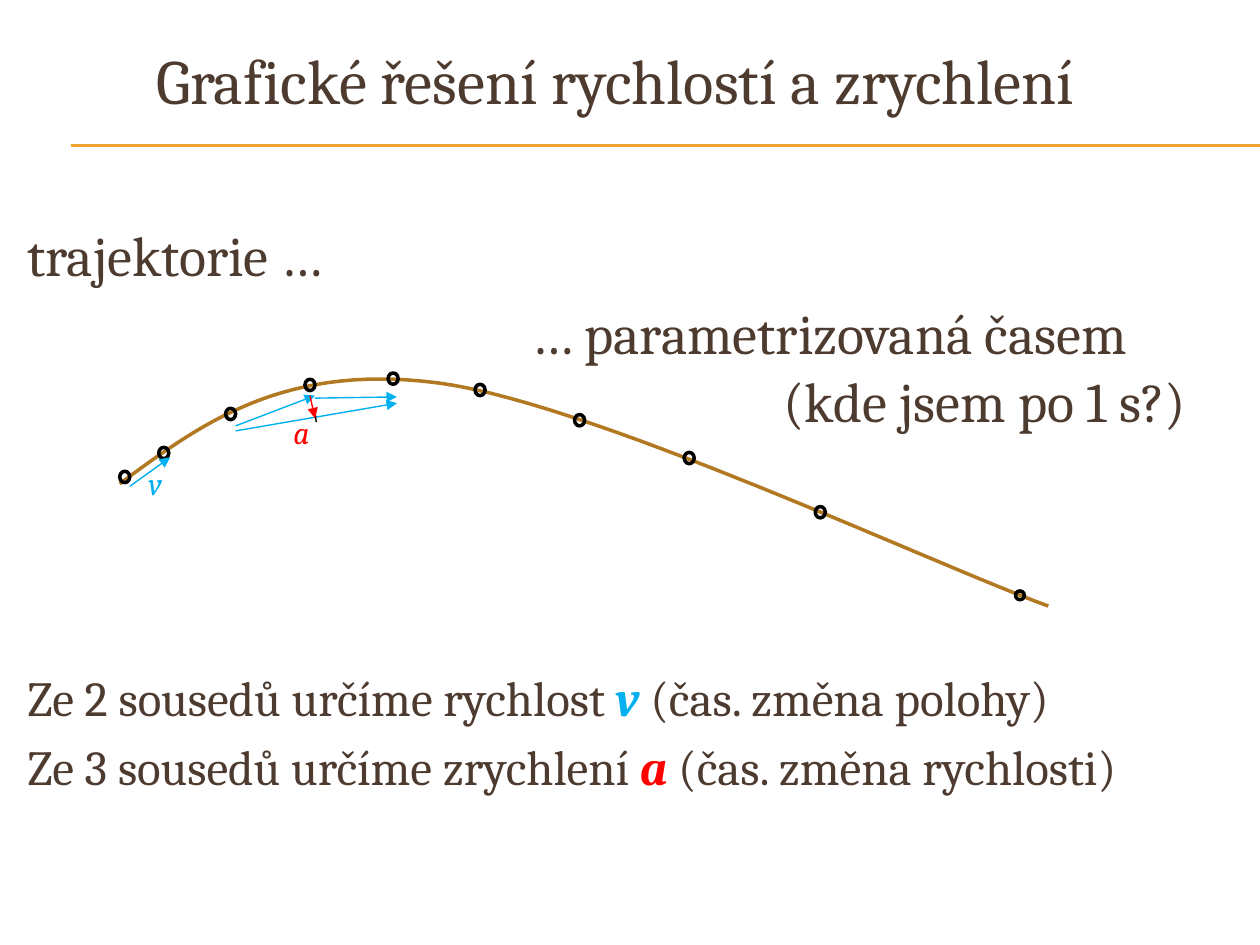
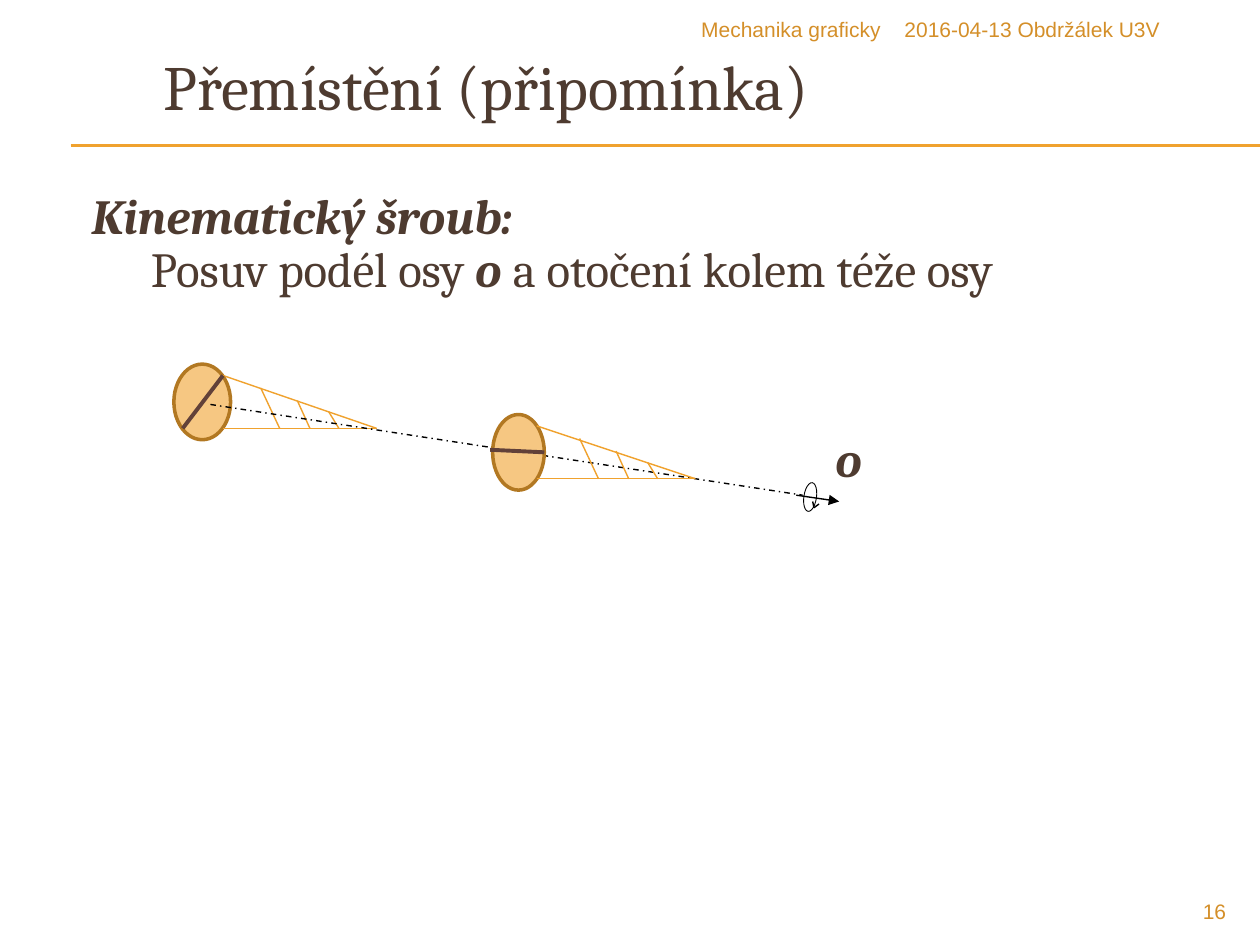
from lxml import etree
from pptx import Presentation
from pptx.dml.color import RGBColor
from pptx.enum.dml import MSO_LINE_DASH_STYLE as Dash
from pptx.enum.shapes import MSO_CONNECTOR as Connector, MSO_SHAPE as Shape
from pptx.enum.text import MSO_ANCHOR as Anchor, PP_ALIGN as Align
from pptx.oxml.ns import qn
from pptx.util import Inches, Pt

SERIF, SANS = "Cambria", "Arial"
BROWN, DARK_BROWN, FOOTER = "4E3B30", "624139", "D48F29"
AMBER, PALE_AMBER, OCHRE = "F0A22E", "F6C782", "B27822"
BLUE, RED, BLACK = "00B0F0", "FF0000", "000000"
THIN = 0.79


def rgb(value):
    return RGBColor.from_string(value)


def add_line(page, start, end, color, width=THIN, arrow=False, dash=None):
    line = page.shapes.add_connector(
        Connector.STRAIGHT, *(Inches(value) for value in (*start, *end)))
    line.line.color.rgb = rgb(color)
    line.line.width = Pt(width)
    if dash:
        line.line.dash_style = dash
    if arrow:
        outline = line.line._get_or_add_ln()
        etree.SubElement(outline, qn("a:tailEnd")).set("type", "triangle")
    etree.SubElement(line._element.spPr, qn("a:effectLst"))


def style_shape(shape, color, width, fill=None):
    shape.shadow.inherit = False
    if fill:
        shape.fill.solid()
        shape.fill.fore_color.rgb = rgb(fill)
    else:
        shape.fill.background()
    shape.line.color.rgb = rgb(color)
    shape.line.width = Pt(width)


def add_ellipse(page, box, color, width, fill=None):
    ellipse = page.shapes.add_shape(Shape.OVAL, *(Inches(value) for value in box))
    style_shape(ellipse, color, width, fill)
    return ellipse


def add_text(page, box, paragraphs, size, color=BROWN, font=SERIF, align=Align.LEFT,
             anchor=Anchor.TOP, wrap=True):
    """Each paragraph is a list of (text, emphasis colour or None); returns the paragraphs."""
    frame = page.shapes.add_textbox(*(Inches(value) for value in box)).text_frame
    frame.word_wrap = wrap
    frame.vertical_anchor = anchor
    for number, spans in enumerate(paragraphs):
        para = frame.add_paragraph() if number else frame.paragraphs[0]
        para.alignment = align
        para.font.name, para.font.size = font, Pt(size)
        para.font.color.rgb = rgb(color)
        if number:
            para.space_before = Pt(size * 0.2)
        for text, emphasis in spans:
            if text == "\n":
                para.add_line_break()
                continue
            span = para.add_run()
            span.text = text
            span.font.name, span.font.size = font, Pt(size)
            span.font.color.rgb = rgb(emphasis or color)
            if emphasis:
                span.font.bold = span.font.italic = True
    return frame.paragraphs


def set_indent(para, left, first=0):
    properties = para._p.get_or_add_pPr()
    properties.set("marL", str(Inches(left)))
    properties.set("indent", str(Inches(first)))


def add_page(deck, title, title_box):
    page = deck.slides.add_slide(deck.slide_layouts[6])
    for height in (1.15, 1.16):
        add_line(page, (0.56, height), (10, height), AMBER, 0.75)
    add_text(page, title_box, [[(title, None)]], 36, anchor=Anchor.MIDDLE)
    return page


def add_footers(page, topic, event, number):
    for text, box, align in (
        (topic, (3.92, 0.08, 3.17, 0.32), Align.RIGHT),
        (event, (7.08, 0.08, 2.75, 0.32), Align.LEFT),
        (number, (9, 7.08, 0.83, 0.27), Align.RIGHT),
    ):
        add_text(page, box, [[(text, None)]], 12, FOOTER, SANS, align)


def bezier_points(start, control_1, control_2, end, steps=30):
    for step in range(1, steps + 1):
        t = step / steps
        weights = ((1 - t) ** 3, 3 * t * (1 - t) ** 2, 3 * t * t * (1 - t), t ** 3)
        yield tuple(sum(w * value for w, value in zip(weights, axis))
                    for axis in zip(start, control_1, control_2, end))


def add_trajectory(page, left, top):
    start, crest, end = (0, 0.83), (2.53, 0.03), (7.37, 1.8)
    points = [*bezier_points(start, (0.65, 0.35), (1.3, -0.13), crest),
              *bezier_points(crest, (3.75, 0.19), (6.46, 1.47), end)]
    points = [(Inches(left + x), Inches(top + y)) for x, y in points]
    builder = page.shapes.build_freeform(Inches(left + start[0]), Inches(top + start[1]))
    builder.add_line_segments(points, close=False)
    style_shape(builder.convert_to_shape(), OCHRE, 2)

    seconds = [(0, 0.73), (0.31, 0.54), (0.84, 0.23), (1.47, 0), (2.13, -0.05),
               (2.82, 0.04), (3.61, 0.28), (4.48, 0.58), (5.52, 1.01)]
    for x, y in seconds:
        add_ellipse(page, (left + x, top + y, 0.08, 0.09), BLACK, 2)
    add_ellipse(page, (left + 7.11, top + 1.68, 0.07, 0.07), BLACK, 2)


def add_vectors(page):
    velocities = [((1.03, 3.86), (1.35, 3.63)), ((1.87, 3.38), (2.5, 3.14)),
                  ((2.5, 3.16), (3.15, 3.15)), ((1.87, 3.42), (3.15, 3.2))]
    for start, end in velocities:
        add_line(page, start, end, BLUE, arrow=True)
    add_line(page, (2.5, 3.27), (2.51, 3.35), BLACK)
    add_line(page, (2.46, 3.14), (2.5, 3.32), RED, arrow=True)
    for name, box, color in (("v", (1.08, 3.63, 0.3, 0.4), BLUE),
                             ("a", (2.23, 3.23, 0.25, 0.4), RED)):
        label = add_text(page, box, [[(name, None)]], 18, color, wrap=False)[0]
        label.runs[0].font.italic = True


def velocity_page(deck):
    page = add_page(deck, "Grafické řešení rychlostí a zrychlení",
                    (1.14, 0.17, 8.59, 0.92))
    intro = add_text(page, (0.12, 1.7, 9.88, 1.8),
                     [[("trajektorie …", None)],
                      [("… parametrizovaná časem", None)],
                      [("(kde jsem po 1 s?)", None)]], 32)
    set_indent(intro[1], 4)
    set_indent(intro[2], 6)
    intro[2].space_before = Pt(0)
    add_text(page, (0.12, 5.25, 9.88, 1.2),
             [[("Ze 2 sousedů určíme rychlost ", None), ("v", BLUE),
               (" (čas. změna polohy)", None)],
              [("Ze 3 sousedů určíme zrychlení ", None), ("a", RED),
               (" (čas. změna rychlosti)", None)]], 28)
    add_trajectory(page, 0.95, 3.01)
    add_vectors(page)


def add_disc_with_cone(page, left, top, width):
    add_ellipse(page, (left, top, width, 0.6), OCHRE, 2, PALE_AMBER)
    rim, apex = width - 0.06, (1.61, 0.51)
    strokes = [((rim, 0.09), apex), ((rim, 0.51), apex),
               ((0.69, 0.19), (0.84, 0.51)), ((0.98, 0.29), (1.08, 0.51)),
               ((1.23, 0.38), (1.31, 0.51))]
    for start, end in strokes:
        add_line(page, *((left + x, top + y) for x, y in (start, end)), AMBER)


def add_rotation_mark(page, left, top):
    turn = add_ellipse(page, (left, top, 0.1, 0.23), BLACK, 0.5)
    turn.rotation = 8.3
    tip = (left + 0.08, top + 0.2)
    for start in ((left + 0.07, top + 0.15), (left + 0.12, top + 0.17)):
        add_line(page, start, tip, BLACK)


def screw_page(deck):
    page = add_page(deck, "Přemístění (připomínka)", (1.2, 0.2, 9, 0.95))
    add_footers(page, "Mechanika graficky", "2016-04-13 Obdržálek U3V", "16")
    screw = add_text(page, (0.63, 1.48, 9, 1.1),
                     [[("Kinematický šroub:", BROWN), ("\n", None),
                       ("Posuv podél osy ", None), ("o ", BROWN),
                       ("a otočení kolem téže osy", None)]], 28)[0]
    set_indent(screw, 0.47, -0.5)
    screw.line_spacing = 0.9

    add_disc_with_cone(page, 1.38, 2.89, 0.45)
    add_line(page, (1.67, 3.21), (6.37, 3.93), BLACK, dash=Dash.DASH_DOT)
    add_disc_with_cone(page, 3.91, 3.29, 0.41)
    add_line(page, (6.32, 3.93), (6.66, 3.98), BLACK, arrow=True)
    add_line(page, (1.77, 2.98), (1.45, 3.4), DARK_BROWN, 2.25)
    add_line(page, (3.89, 3.57), (4.32, 3.59), DARK_BROWN, 2.25)
    add_rotation_mark(page, 6.38, 3.83)
    add_text(page, (6.53, 3.35, 0.5, 0.55), [[("o", BROWN)]], 28)


def main():
    deck = Presentation()
    deck.slide_width, deck.slide_height = Inches(10), Inches(7.5)
    velocity_page(deck)
    screw_page(deck)
    deck.save("out.pptx")


if __name__ == "__main__":
    main()
